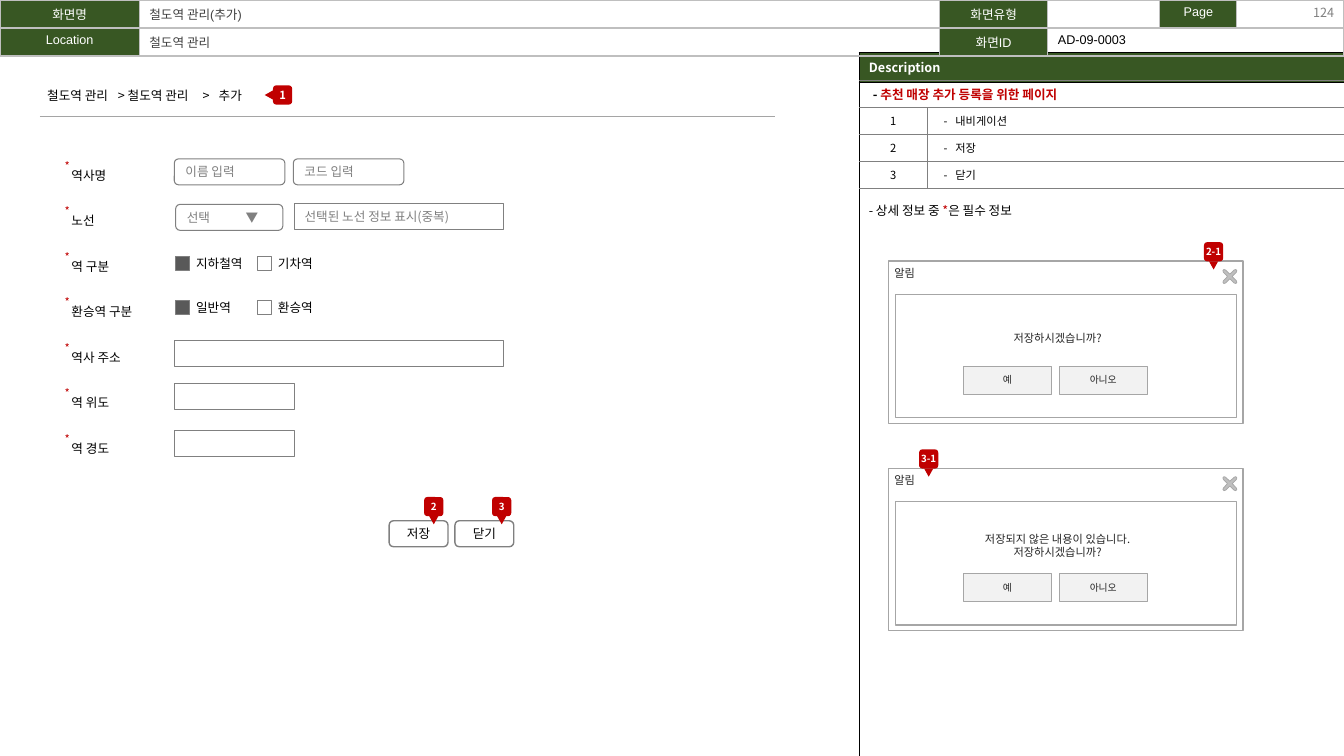
from lxml import etree
from pptx import Presentation, util as u
from pptx.dml.color import RGBColor
from pptx.enum import shapes, text
from pptx.oxml.ns import qn

Pt = u.Pt
KIND = shapes.MSO_SHAPE
MID, TOP = text.MSO_ANCHOR.MIDDLE, text.MSO_ANCHOR.TOP
LEFT, MIDST, RIGHT = text.PP_ALIGN.LEFT, text.PP_ALIGN.CENTER, text.PP_ALIGN.RIGHT
NOTO = "Noto Sans CJK KR"
GREEN, RED, GRAY, SOFT, DARK = "385723", "C00000", "808080", "A6A6A6", "262626"
BLACK, WHITE = "000000", "FFFFFF"


def hue(code):
    """Turn a hex string into a colour."""
    return RGBColor.from_string(code)


def dress(run, size, color, bold=False, font=NOTO):
    """Format one run."""
    run.font.size = Pt(size)
    run.font.bold = bold
    run.font.color.rgb = hue(color)
    run.font.name = font
    etree.SubElement(run._r.get_or_add_rPr(), qn("a:ea"), typeface=NOTO)


def say(frame, words, size=9, color=BLACK, align=LEFT, bold=False, font=NOTO):
    """Fill a text frame and format its runs."""
    frame.text = words
    for para in frame.paragraphs:
        para.alignment = align
        for run in para.runs:
            dress(run, size, color, bold, font)


def mix(para, parts, size=9, bold=False):
    """Add runs of several colours to a paragraph."""
    for words, color in parts:
        run = para.add_run()
        run.text = words
        dress(run, size, color, bold)


def tabs(frame, *stops):
    """Set tab stops on the first paragraph."""
    row = etree.SubElement(frame.paragraphs[0]._p.get_or_add_pPr(), qn("a:tabLst"))
    for stop in stops:
        etree.SubElement(row, qn("a:tab"), pos=str(Pt(stop)), algn="l")


def inset(frame, x, y):
    """Set the side and top margins of a frame or cell."""
    frame.margin_left = frame.margin_right = Pt(x)
    frame.margin_top = frame.margin_bottom = Pt(y)


def note(page, box, words, size=9, color=BLACK, align=LEFT, pad=(7.2, 3.6), anchor=MID):
    """Place a text box."""
    frame = page.shapes.add_textbox(*map(Pt, box)).text_frame
    frame.word_wrap = True
    frame.vertical_anchor = anchor
    inset(frame, *pad)
    say(frame, words, size, color, align)
    return frame


def paint(shape, fill, line=None, width=0.75):
    """Give a shape its fill and line."""
    shape.shadow.inherit = False
    shape.fill.solid()
    shape.fill.fore_color.rgb = hue(fill)
    if line:
        shape.line.color.rgb = hue(line)
        shape.line.width = Pt(width)
    else:
        shape.line.fill.background()
    return shape


def block(page, kind, box, fill=WHITE, line=None, width=0.75, words="", **look):
    """Place a preset shape, with text if given."""
    shape = paint(page.shapes.add_shape(kind, *map(Pt, box)), fill, line, width)
    if words:
        shape.text_frame.vertical_anchor = MID
        say(shape.text_frame, words, **look)
    return shape


def grid(page, x, y, cols, rows):
    """Place a plain table."""
    frame = page.shapes.add_table(len(rows), len(cols), Pt(x), Pt(y), Pt(sum(cols)), Pt(sum(rows)))
    table = frame.table
    table.first_row = table.horz_banding = False
    for col, width in zip(table.columns, cols):
        col.width = Pt(width)
    for row, height in zip(table.rows, rows):
        row.height = Pt(height)
    return table


def cell(item, words, sides, edge, width, fill=None, anchor=TOP, **look):
    """Set the borders, fill and text of a cell."""
    props = item._tc.get_or_add_tcPr()
    for side in "LRTB":
        line = etree.SubElement(props, qn("a:ln" + side), w=str(Pt(width)))
        if side in sides:
            solid = etree.SubElement(line, qn("a:solidFill"))
            etree.SubElement(solid, qn("a:srgbClr"), val=edge)
        else:
            etree.SubElement(line, qn("a:noFill"))
    if fill:
        item.fill.solid()
        item.fill.fore_color.rgb = hue(fill)
    else:
        item.fill.background()
    item.vertical_anchor = anchor
    say(item.text_frame, words, **look)
    etree.SubElement(item.text_frame.paragraphs[0]._p, qn("a:endParaRPr"), sz="900")


def mark(page, x, y, num, left=False):
    """Place a red number tag with its pointer."""
    cx, cy = (x - 3, y + 6.85) if left else (x + 6.85, y + 16.6)
    tip = block(page, KIND.ISOSCELES_TRIANGLE, (cx - 3.25, cy - 2.9, 6.5, 5.8), RED)
    tip.rotation = 270 if left else 180
    tag = block(page, KIND.ROUNDED_RECTANGLE, (x, y, 13.7, 13.7), RED, words=num,
                size=8 if left else 7, color=WHITE, align=MIDST, bold=True)
    inset(tag.text_frame, 0, 0)
    tag.text_frame.word_wrap = False


def head(page):
    """Build the header table and the page number."""
    data = [["화면명", "철도역 관리(추가)", "화면유형", "", "Page", ""],
            ["Location", "철도역 관리", "화면ID", "AD-09-0003", "", ""]]
    table = grid(page, 0, 0, [99.5, 571.5, 77.5, 80, 55, 76.5], [20, 20])
    table.cell(1, 3).merge(table.cell(1, 5))
    for r, row in enumerate(data):
        for c, words in enumerate(row):
            key = c in (0, 2) or words == "Page"
            color = WHITE if key else BLACK if c == 3 else "404040"
            cell(table.cell(r, c), words, "LRTB", "BFBFBF", 1, GREEN if key else None,
                 color=color, align=MIDST if key else LEFT, font="Arial")
    note(page, (744, 0, 216, 17.5), "124", color=GRAY, align=RIGHT)


def side(page, x, y):
    """Build the description panel."""
    panel = grid(page, x, y, [346.5], [21.5, 481])
    cell(panel.cell(0, 0), "Description", "LRTB", BLACK, 0.5, GREEN, color=WHITE, bold=True)
    cell(panel.cell(1, 0), "", "LRTB", BLACK, 0.5)
    table = grid(page, x, y + 20, [49, 297.5], [19.3] * 4)
    top = table.cell(0, 0)
    top.merge(table.cell(0, 1))
    for c in range(2):
        cell(table.cell(0, c), "", "TB", GRAY, 0.75, anchor=MID)
    inset(top, 10, 2)
    mix(top.text_frame.paragraphs[0], [("- ", BLACK), ("추천 매장 추가 등록을 위한 페이지", RED)], bold=True)
    last = top.text_frame.paragraphs[0]._p
    last.append(last.find(qn("a:endParaRPr")))
    for r, words in enumerate(["내비게이션", "저장", "닫기"], 1):
        num, info = table.cell(r, 0), table.cell(r, 1)
        cell(num, str(r), "RTB", GRAY, 0.75, anchor=MID, size=8, align=MIDST)
        cell(info, "-\t" + words, "LTB", GRAY, 0.75, anchor=MID, size=8)
        inset(info, 11.5, 2)
        tabs(info.text_frame, 8.5)
    frame = note(page, (x, y + 103.5, 252, 18), "")
    mix(frame.paragraphs[0], [("- 상세 정보 중 ", BLACK), ("*", RED), ("은 필수 정보", BLACK)])


def alert(page, x, y, words, num, shift):
    """Build an alert window with its tag."""
    block(page, KIND.RECTANGLE, (x, y, 253.5, 116), line=SOFT, width=1)
    block(page, KIND.RECTANGLE, (x + 5, y + 24, 244, 88), line=SOFT)
    for dx, name in [(53.5, "예"), (122, "아니오")]:
        block(page, KIND.RECTANGLE, (x + dx, y + 75, 63, 20), "F2F2F2", SOFT, 0.5,
              name, size=7, color=DARK, align=MIDST)
    arm = [(0, -1.7), (3, -4.6), (4.2, -5), (5, -4.2), (4.6, -3)]
    dots = []
    for _ in range(4):
        dots += arm
        arm = [(-b, a) for a, b in arm]
    dots = [(Pt(x + 244 + a), Pt(y + 11 + b)) for a, b in dots]
    form = page.shapes.build_freeform(*dots[0])
    form.add_line_segments(dots[1:], close=True)
    paint(form.convert_to_shape(), "BFBFBF", SOFT, 0.5)
    note(page, (x + 7.5, y + 35.5, 227, 39.5), words, 8, DARK, MIDST, (4.3, 2.2))
    note(page, (x, y + 1.5, 34, 15), "알림", 8, DARK, pad=(4.3, 2.2), anchor=TOP)
    mark(page, x + shift, y - 13.5, num)


def trail(page, x, y):
    """Build the breadcrumb title and the rule below it."""
    title = page.shapes.title
    title.left, title.top, title.width, title.height = map(Pt, (x, y, 231, 18))
    frame = title.text_frame
    inset(frame, 7.2, 3.6)
    frame.vertical_anchor = MID
    frame.auto_size = text.MSO_AUTO_SIZE.NONE
    say(frame, "철도역 관리\t> 철도역 관리\t>\t추가")
    tabs(frame, 50.5, 111, 122.5)
    rule = page.shapes.add_connector(shapes.MSO_CONNECTOR.STRAIGHT, *map(Pt, (x + 2, y + 24, x + 527, y + 24)))
    rule.line.color.rgb = hue("A5A5A5")
    rule.line.width = Pt(0.5)
    etree.SubElement(rule._element.spPr, qn("a:effectLst"))
    mark(page, x + 168.5, y + 2, "1", left=True)


def form(page, x, y):
    """Build the entry form."""
    names = ["역사명", "노선", "역 구분", "환승역 구분", "역사 주소", "역 위도", "역 경도"]
    for i, name in enumerate(names):
        step = y + 32.5 * i
        note(page, (x, step + 6, 72, 18), name)
        note(page, (x - 3.5, step, 15, 17.5), "*", 8, RED, MIDST, (0, 3.6), TOP)
    field, box = KIND.ROUNDED_RECTANGLE, KIND.RECTANGLE
    for kind, dx, dy, wide, words in [
            (field, 80.5, 3.5, 79, "이름 입력"), (field, 165.5, 3.5, 79, "코드 입력"),
            (field, 81.5, 36, 76.5, "선택\t▼"), (box, 166.5, 35.5, 149.5, "선택된 노선 정보 표시(중복)"),
            (box, 80.5, 133.5, 235.5, ""), (box, 80.5, 164, 86, ""), (box, 80.5, 197.5, 86, "")]:
        item = block(page, kind, (x + dx, y + dy, wide, 18.5), line=GRAY, words=words, color=GRAY)
        if "\t" in words:
            tabs(item.text_frame, 42)
    for dy, pair in [(73, ["지하철역", "기차역"]), (104.5, ["일반역", "환승역"])]:
        for c, words in enumerate(pair):
            dx = 81.5 + 58.5 * c
            block(page, box, (x + dx, y + dy, 10, 10), WHITE if c else "595959", GRAY, 0.5)
            note(page, (x + dx + 7.5, y + dy - 4, 53, 18), words)
    for c, words in enumerate(["저장", "닫기"]):
        left = x + 234 + 47 * c
        block(page, field, (left, y + 262, 42, 18.5), line=GRAY, width=1, words=words, align=MIDST)
        mark(page, left + 25 + 1.5 * c, y + 245, str(c + 2))


def main():
    """Build and save the slide."""
    deck = Presentation()
    deck.slide_width, deck.slide_height = Pt(960), Pt(540)
    page = deck.slides.add_slide(deck.slide_layouts[5])
    side(page, 613.5, 37.5)
    head(page)
    trail(page, 26.5, 59)
    alert(page, 634.5, 186.5, "저장하시겠습니까?", "2-1", 225.5)
    alert(page, 634.5, 334.5, "저장되지 않은 내용이 있습니다.\n저장하시겠습니까?", "3-1", 22)
    form(page, 44, 110)
    deck.save("out.pptx")


if __name__ == "__main__":
    main()
